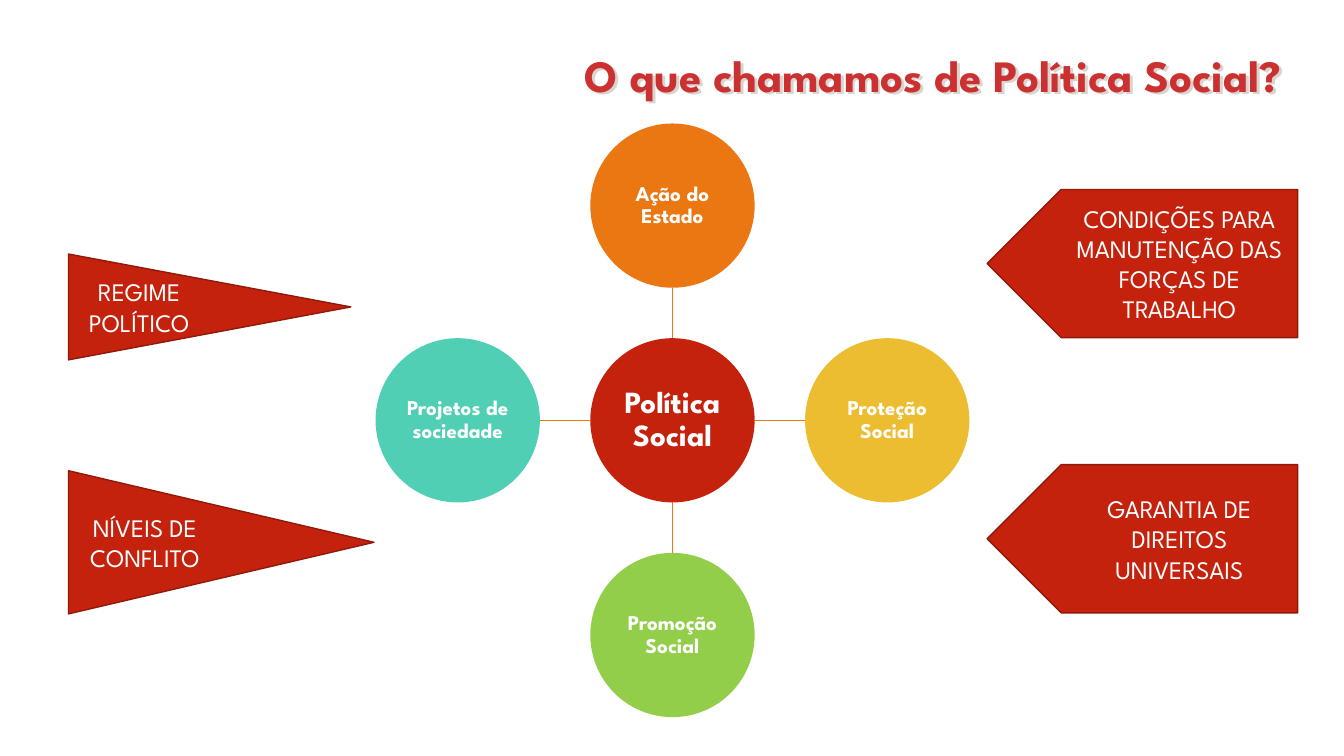
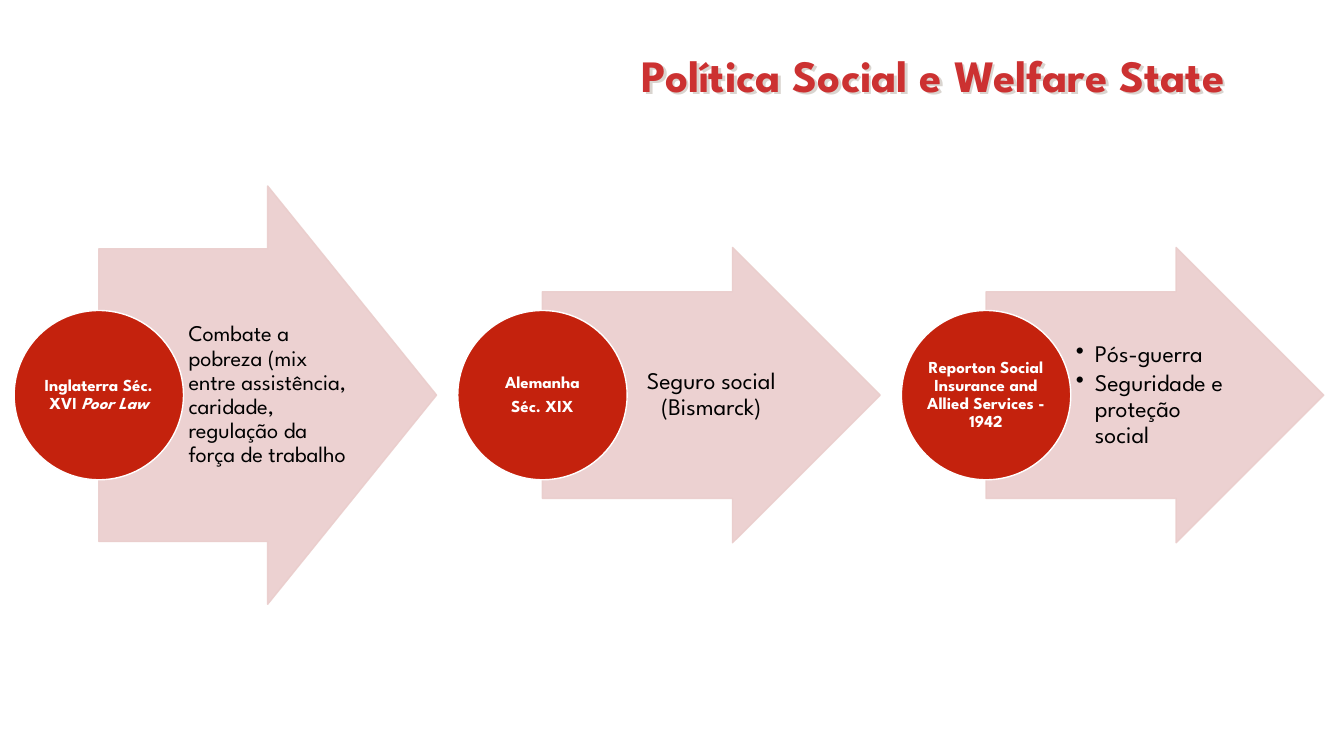
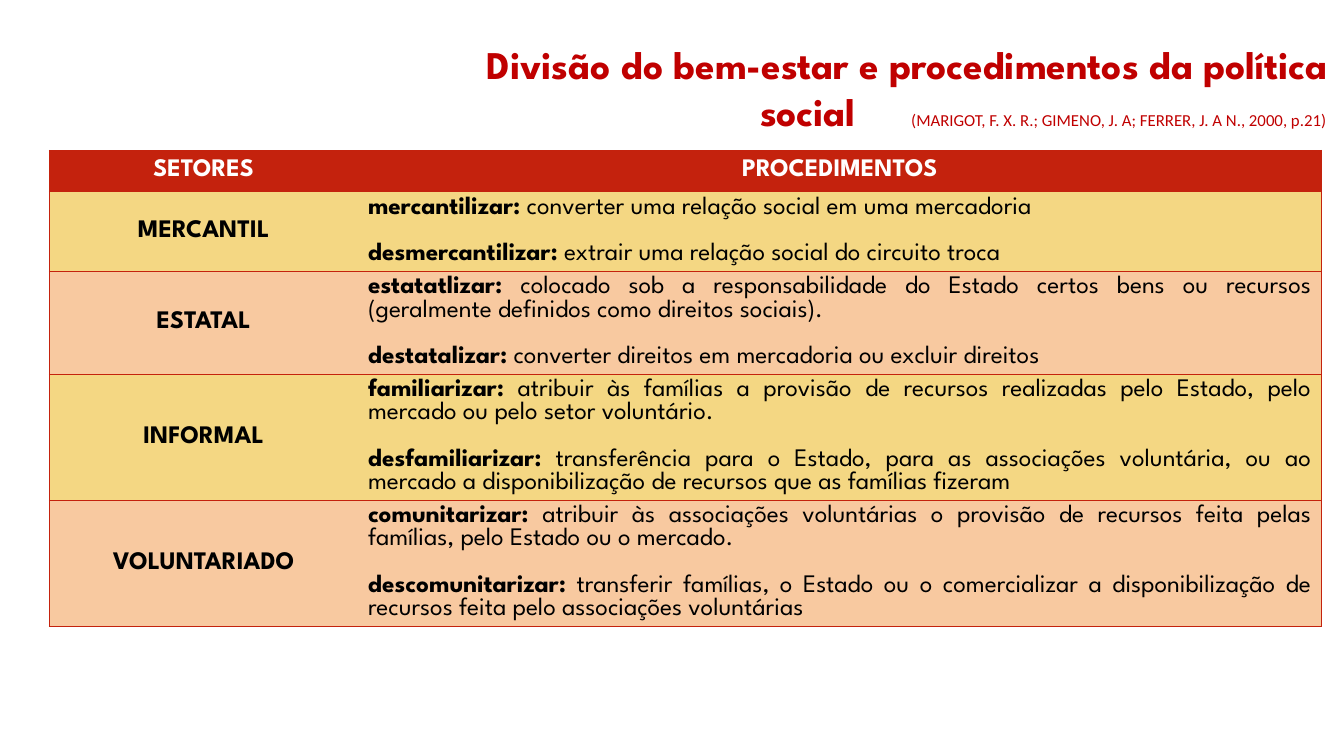
from lxml import etree
from pptx import Presentation
from pptx.dml.color import RGBColor
from pptx.enum.shapes import MSO_CONNECTOR, MSO_SHAPE
from pptx.enum.text import MSO_ANCHOR, PP_ALIGN
from pptx.oxml.ns import qn
from pptx.util import Inches, Pt

LEFT, CENTER, RIGHT, JUSTIFY = PP_ALIGN.LEFT, PP_ALIGN.CENTER, PP_ALIGN.RIGHT, PP_ALIGN.JUSTIFY
TOP, MIDDLE = MSO_ANCHOR.TOP, MSO_ANCHOR.MIDDLE
ELLIPSE = MSO_SHAPE.OVAL
RIGHT_ARROW, LEFT_ARROW = MSO_SHAPE.RIGHT_ARROW, MSO_SHAPE.LEFT_ARROW
STRAIGHT = MSO_CONNECTOR.STRAIGHT

FONT = "League Spartan"
COLORS = {
    "red": "C4220D", "dark red": "91190A", "title": "CC3131", "crimson": "C00000",
    "orange": "EB7712", "yellow": "ECBD31", "green": "92CE4A", "teal": "50CFB4",
    "pink": "EACDCC", "sand": "F4D783", "peach": "F8C9A0",
    "white": "FFFFFF", "black": "000000", "shadow": "D9D4CF",
}
DEFAULT_MARGINS = (0.1, 0.05, 0.1, 0.05)
TIGHT_MARGINS = (0.01, 0.01, 0.01, 0.01)


def rgb(name):
    return RGBColor.from_string(COLORS[name])


def add_xml(parent, tag, **attributes):
    return etree.SubElement(parent, qn(tag), {key: str(value) for key, value in attributes.items()})


class Deck:
    """Holds the shared style and the slide being built."""

    def __init__(self):
        self.presentation = Presentation()
        self.presentation.slide_width = Inches(13.33)
        self.presentation.slide_height = Inches(7.5)
        self.slide = None

    def new_slide(self):
        self.slide = self.presentation.slides.add_slide(self.presentation.slide_layouts[6])

    def fill_text(self, frame, paragraphs, size, color, bold=False, align=CENTER,
                  line_spacing=None, space_after=None, bullet=False):
        """Fill a frame; a paragraph is a string or a list of (text, run font settings)."""
        for index, content in enumerate(paragraphs):
            paragraph = frame.paragraphs[0] if index == 0 else frame.add_paragraph()
            paragraph.alignment = align
            paragraph.line_spacing = line_spacing
            paragraph.space_after = space_after
            if bullet:
                properties = paragraph._p.get_or_add_pPr()
                properties.set("marL", str(Inches(0.19)))
                properties.set("indent", str(-Inches(0.19)))
                add_xml(properties, "a:buChar", char="•")
            font = paragraph.font
            font.name, font.size, font.bold = FONT, Pt(size), bold
            font.color.rgb = rgb(color)
            for text, settings in [(content, {})] if isinstance(content, str) else content:
                run = paragraph.add_run()
                run.text = text
                for name, value in settings.items():
                    setattr(run.font, name, value)

    def frame(self, shape, anchor, margins):
        frame = shape.text_frame
        frame.word_wrap = True
        frame.vertical_anchor = anchor
        (frame.margin_left, frame.margin_top,
         frame.margin_right, frame.margin_bottom) = map(Inches, margins)
        return frame

    def text(self, box, paragraphs, size, color, anchor=TOP, margins=DEFAULT_MARGINS, **style):
        shape = self.slide.shapes.add_textbox(*map(Inches, box))
        self.fill_text(self.frame(shape, anchor, margins), paragraphs, size, color, **style)
        return shape

    def title(self, text):
        shape = self.text((5.08, 0.42, 8.36, 0.64), [text], 32, "title", bold=True)
        effects = add_xml(shape._element.spPr, "a:effectLst")
        shadow = add_xml(effects, "a:outerShdw", blurRad=0, dist=Inches(0.04), dir=2700000, algn="tl")
        add_xml(shadow, "a:srgbClr", val=COLORS["shadow"])

    def shape(self, kind, box, fill, line=None, adjustments=(), opacity=None):
        shape = self.slide.shapes.add_shape(kind, *map(Inches, box))
        shape.shadow.inherit = False
        for index, value in enumerate(adjustments):
            shape.adjustments[index] = value
        shape.fill.solid()
        shape.fill.fore_color.rgb = rgb(fill)
        if line:
            shape.line.color.rgb = rgb(line)
            shape.line.width = Pt(1)
        else:
            shape.line.fill.background()
        if opacity:
            for color in shape._element.spPr.iter(qn("a:srgbClr")):
                add_xml(color, "a:alpha", val=opacity * 1000)
        return shape

    def circle(self, center_x, center_y, diameter, paragraphs, size, fill, line=None):
        box = (center_x - diameter / 2, center_y - diameter / 2, diameter, diameter)
        shape = self.shape(ELLIPSE, box, fill, line)
        self.fill_text(self.frame(shape, MIDDLE, TIGHT_MARGINS), paragraphs, size, "white",
                       bold=True, line_spacing=0.9, space_after=Pt(round(size * 0.35)))

    def label_arrow(self, kind, box, adjustments, text):
        shape = self.shape(kind, box, "red", "dark red", adjustments)
        self.fill_text(self.frame(shape, MIDDLE, DEFAULT_MARGINS), [text], 18, "white")

    def line(self, *ends):
        connector = self.slide.shapes.add_connector(STRAIGHT, *map(Inches, ends))
        connector.line.color.rgb = rgb("orange")
        connector.line.width = Pt(1)
        add_xml(connector._element.spPr, "a:effectLst")

    def table(self, left, top, widths, heights):
        table = self.slide.shapes.add_table(
            len(heights), len(widths), Inches(left), Inches(top),
            Inches(sum(widths)), Inches(sum(heights))).table
        table.first_row = table.horz_banding = False
        for column, width in zip(table.columns, widths):
            column.width = Inches(width)
        for row, height in zip(table.rows, heights):
            row.height = Inches(height)
        return table

    def cell(self, cell, paragraphs, color, fill, open_side, anchor=MIDDLE, **style):
        """Fill a cell and border it on every side but the open one."""
        properties = cell._tc.get_or_add_tcPr()
        for side in ("lnL", "lnR", "lnT", "lnB"):
            border = add_xml(properties, "a:" + side, w=Pt(0.75))
            if side == open_side:
                add_xml(border, "a:noFill")
            else:
                add_xml(add_xml(border, "a:solidFill"), "a:srgbClr", val=COLORS["red"])
        cell.fill.solid()
        cell.fill.fore_color.rgb = rgb(fill)
        cell.vertical_anchor = anchor
        self.fill_text(cell.text_frame, paragraphs, 18, color, **style)


def build_concept_slide(deck):
    deck.new_slide()
    center_x, center_y, diameter, step = 6.67, 4.17, 1.63, 2.13
    deck.circle(center_x, center_y, diameter, ["Política Social"], 22, "red")
    satellites = [
        (0, -1, "Ação do Estado", "orange"),
        (1, 0, "Proteção Social", "yellow"),
        (0, 1, "Promoção Social", "green"),
        (-1, 0, "Projetos de sociedade", "teal"),
    ]
    near, far = diameter / 2, step - diameter / 2
    for dx, dy, text, fill in satellites:
        deck.line(center_x + dx * near, center_y + dy * near,
                  center_x + dx * far, center_y + dy * far)
        deck.circle(center_x + dx * step, center_y + dy * step, diameter, [text], 15, fill)

    wedge, pentagon = (0.5, 2.71), (1, 0.5)
    deck.label_arrow(RIGHT_ARROW, (0.68, 2.52, 2.8, 1.05), wedge, "REGIME POLÍTICO")
    deck.label_arrow(RIGHT_ARROW, (0.68, 4.67, 3.03, 1.42), wedge, "NÍVEIS DE CONFLITO")
    deck.label_arrow(LEFT_ARROW, (9.79, 1.88, 3.08, 1.47), pentagon,
                     "CONDIÇÕES PARA MANUTENÇÃO DAS FORÇAS DE TRABALHO")
    deck.label_arrow(LEFT_ARROW, (9.79, 4.61, 3.08, 1.47), pentagon,
                     "GARANTIA DE DIREITOS UNIVERSAIS")
    deck.title("O que chamamos de Política Social?")


def build_history_slide(deck):
    deck.new_slide()
    deck.title("Política Social e Welfare State")
    stages = [
        (4.15, [[("Inglaterra Séc. XVI ", {}), ("Poor Law", {"italic": True})]],
         ["Combate a pobreza (mix entre assistência, caridade, regulação da força de trabalho"],
         16, {"align": LEFT, "space_after": Pt(6)}),
        (2.93, ["Alemanha", "Séc. XIX"],
         ["Seguro social (Bismarck)"], 17, {"space_after": Pt(6)}),
        (2.93, ["Reporton Social Insurance and Allied Services - 1942"],
         ["Pós-guerra", "Seguridade e proteção social"],
         17, {"align": LEFT, "bullet": True, "space_after": Pt(2.5)}),
    ]
    middle, shaft = 3.92, 0.7
    for index, (height, heading, details, size, style) in enumerate(stages):
        left = 0.98 + index * 4.4
        deck.shape(RIGHT_ARROW, (left, middle - height / 2, 3.35, height), "pink", "pink",
                   (shaft, 0.5), opacity=90)
        deck.text((left + 0.84, middle - height * shaft / 2, 1.64, height * shaft),
                  details, size, "black", MIDDLE, (0.05, 0.01, 0.02, 0.01),
                  line_spacing=0.9, **style)
        deck.circle(left, middle, 1.68, heading, 12, "red", "white")


def build_sectors_slide(deck):
    deck.new_slide()
    sectors = [
        ("MERCANTIL", 0.79, [
            ("mercantilizar:", " converter uma relação social em uma mercadoria"),
            ("desmercantilizar:", " extrair uma relação social do circuito troca")]),
        ("ESTATAL", 1.02, [
            ("estatatlizar:", " colocado sob a responsabilidade do Estado certos bens ou recursos "
             "(geralmente definidos como direitos sociais)."),
            ("destatalizar:", " converter direitos em mercadoria ou excluir direitos")]),
        ("INFORMAL", 1.25, [
            ("familiarizar:", " atribuir às famílias a provisão de recursos realizadas pelo "
             "Estado, pelo mercado ou pelo setor voluntário."),
            ("desfamiliarizar:", " transferência para o Estado, para as associações voluntária, "
             "ou ao mercado a disponibilização de recursos que as famílias fizeram")]),
        ("VOLUNTARIADO", 1.25, [
            ("comunitarizar:", " atribuir às associações voluntárias o provisão de recursos "
             "feita pelas famílias, pelo Estado ou o mercado."),
            ("descomunitarizar:", " transferir famílias, o Estado ou o comercializar a "
             "disponibilização de recursos feita pelo associações voluntárias")]),
    ]
    table = deck.table(0.49, 1.49, (3.06, 9.56), [0.41] + [height for _, height, _ in sectors])
    for column, (heading, open_side) in enumerate([("SETORES", "lnR"), ("PROCEDIMENTOS", "lnL")]):
        deck.cell(table.cell(0, column), [heading], "white", "red", open_side, bold=True)
    for row, (sector, _, procedures) in enumerate(sectors, start=1):
        fill = "sand" if row % 2 else "peach"
        deck.cell(table.cell(row, 0), [sector], "black", fill, "lnR", bold=True)
        definitions = [[(term, {"bold": True}), (meaning, {})] for term, meaning in procedures]
        cell = table.cell(row, 1)
        deck.cell(cell, definitions, "black", fill, "lnL", TOP,
                  align=JUSTIFY, line_spacing=Pt(16.56))
        cell.text_frame.paragraphs[0].space_after = Pt(16.56)

    citation = {"name": "Calibri", "size": Pt(12), "bold": False}
    deck.text((4.05, 0.35, 9.21, 1.51), [[
        ("Divisão do bem-estar e procedimentos da política social ", {}),
        ("\t(MARIGOT, F. X. R.; GIMENO, J. A; FERRER, J. A N., 2000, p.21)", citation),
    ]], 28, "crimson", bold=True, align=RIGHT)


def main():
    deck = Deck()
    build_concept_slide(deck)
    build_history_slide(deck)
    build_sectors_slide(deck)
    deck.presentation.save("out.pptx")


if __name__ == "__main__":
    main()
